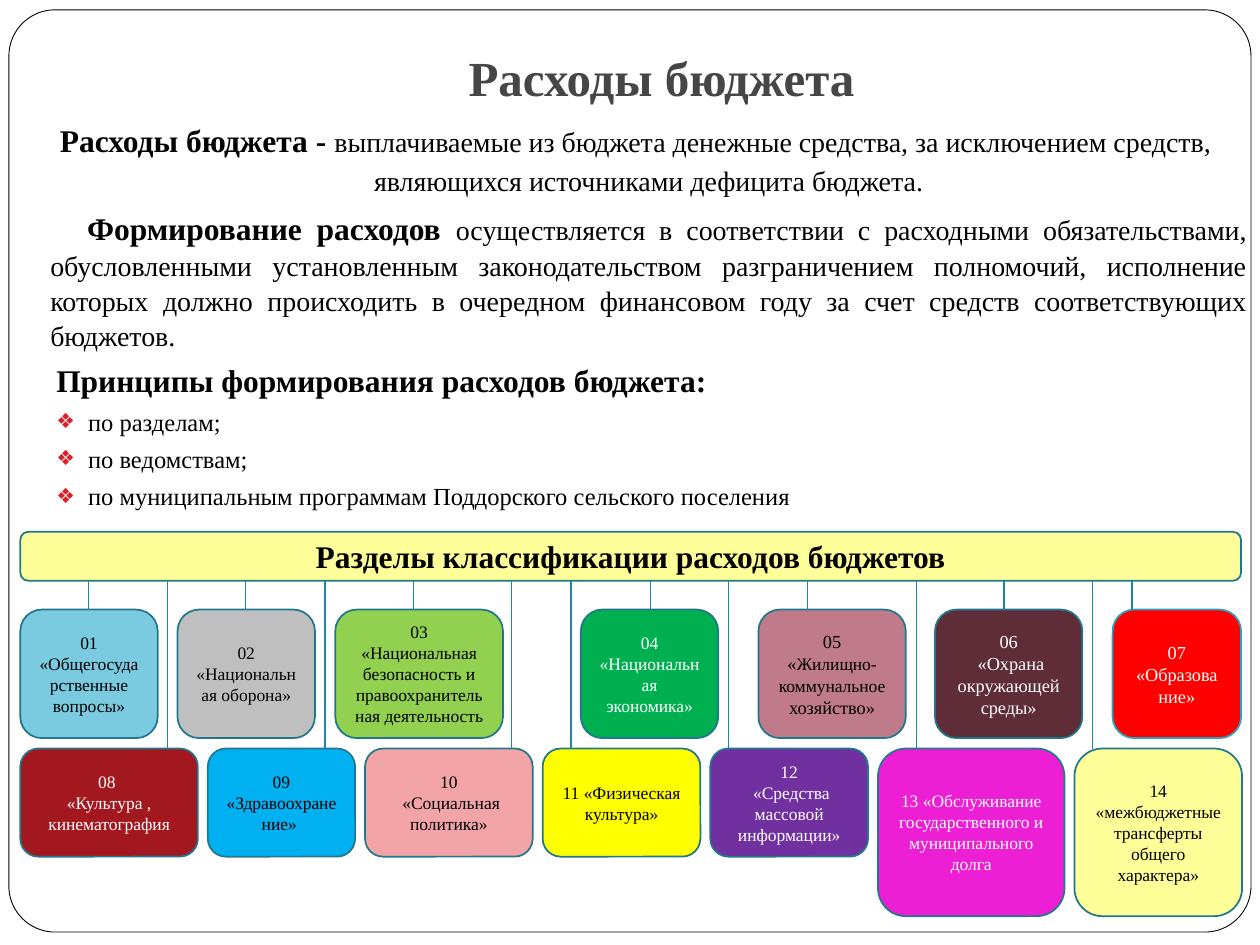
from dataclasses import dataclass
from typing import NamedTuple

from lxml.etree import SubElement
from pptx import Presentation
from pptx.dml.color import RGBColor
from pptx.enum.shapes import MSO_CONNECTOR as Connector, MSO_SHAPE as Preset
from pptx.enum.text import MSO_ANCHOR as Anchor, MSO_AUTO_SIZE as AutoSize, PP_ALIGN as Align
from pptx.oxml.ns import qn
from pptx.util import Cm, Pt

FONT = "Times New Roman"
BLACK, WHITE, YELLOW = "000000", "FFFFFF", "FFFF99"
TEAL, AQUA, DROP_COLOR, BULLET_COLOR = "21788D", "2DA2BF", "1E859F", "DA1F28"
LEFT, FULL_WIDTH, GAP = 0.41, 24.61, 0.2
BANNER_TOP, BANNER_BOTTOM = 10.72, 11.71
UPPER_TOP, UPPER_HEIGHT = 12.29, 2.59
LOWER_TOP, LOWER_HEIGHT, TALL_HEIGHT = 15.09, 2.18, 3.38


class Run(NamedTuple):
    text: str
    size: float
    bold: bool = False


@dataclass
class BodyParagraph:
    runs: list[Run]
    align: Align = Align.JUSTIFY
    margin: float = 1.52
    indent: float = -0.64
    before: float = 3.7
    bullet: bool = False


@dataclass
class Section:
    width: float
    drop: float
    fill: str
    color: str
    text: str
    left: float = LEFT
    size: float = 10
    height: float = LOWER_HEIGHT
    line: str = TEAL


BODY = [
    BodyParagraph(
        [Run(" ", 26), Run("Расходы бюджета - ", 18, True),
         Run("выплачиваемые из бюджета денежные средства, за исключением средств, "
             "являющихся источниками дефицита бюджета.", 16)],
        Align.CENTER, 0.76, -0.76, 5.8),
    BodyParagraph(
        [Run("Формирование расходов ", 18, True),
         Run("осуществляется в соответствии с расходными обязательствами, обусловленными "
             "установленным законодательством разграничением полномочий, исполнение которых "
             "должно происходить в очередном финансовом году за счет средств "
             "соответствующих бюджетов.", 16)],
        margin=0.76, indent=0.74, before=5.8),
    BodyParagraph([Run("Принципы формирования расходов бюджета:", 18, True)]),
    *(BodyParagraph([Run(text, 14)], bullet=True) for text in (
        "по разделам;",
        "по ведомствам;",
        "по муниципальным программам Поддорского сельского поселения")),
]

UPPER = [
    Section(2.77, 1.78, "7ACBE0", BLACK, "01 «Общегосударственные вопросы»"),
    Section(2.77, 4.95, "BFBFBF", BLACK, "02 «Национальная оборона»", 3.58),
    Section(3.38, 8.33, "92D050", BLACK,
            "03 «Национальная безопасность и правоохранительная деятельность", 6.76),
    Section(2.77, 13.11, "00B050", WHITE, "04 «Национальная экономика»", 11.71),
    Section(2.97, 16.28, "C07B8A", BLACK, "05 «|Жилищно-коммунальное| хозяйство»", 15.29, 10.5),
    Section(2.97, 20.24, "5E2D37", WHITE, "06\n «Охрана окружающей среды»", 18.85, 10.5),
    Section(2.59, 22.82, "FF0000", WHITE, "07 «Образование»", 22.43, 10.5, line=AQUA),
]

LOWER = [
    Section(3.58, 3.38, "A3171E", WHITE, "08 \n«Культура , кинематография"),
    Section(2.97, 6.55, "00B0F0", BLACK, "09 «Здравоохранение» "),
    Section(3.38, 10.31, "F2A4A7", BLACK, "10\n «Социальная политика»"),
    Section(3.18, 11.51, "FFFF00", BLACK, "11 «Физическая культура»"),
    Section(3.18, 14.68, "7030A0", WHITE, "12\n «Средства массовой информации»"),
    Section(3.76, 18.47, "ED1FD4", WHITE,
            "13 «Обслуживание государственного и муниципального долга", height=TALL_HEIGHT),
    Section(3.38, 22.02, YELLOW, BLACK,
            "14 «межбюджетные трансферты общего характера»", height=TALL_HEIGHT),
]


def rgb(value: str) -> RGBColor:
    """Turn a hex string into a colour."""
    return RGBColor.from_string(value)


def place(shape, left: float, top: float, width: float, height: float) -> None:
    """Move and size a shape in centimetres."""
    shape.left, shape.top, shape.width, shape.height = map(Cm, (left, top, width, height))


def style(paragraph, size: float, color: str, bold: bool = False, align: Align = Align.CENTER) -> None:
    """Set the alignment and font of a whole paragraph."""
    paragraph.alignment = align
    font = paragraph.font
    font.name, font.size, font.bold = FONT, Pt(size), bold
    font.color.rgb = rgb(color)


def add_box(slide, left: float, top: float, width: float, height: float,
            fill: str, line: str, line_width: float = 1):
    """Draw a rounded box."""
    shape = slide.shapes.add_shape(Preset.ROUNDED_RECTANGLE, *map(Cm, (left, top, width, height)))
    shape.shadow.inherit = False
    shape.fill.solid()
    shape.fill.fore_color.rgb = rgb(fill)
    shape.line.color.rgb = rgb(line)
    shape.line.width = Pt(line_width)
    return shape


def write_lines(shape, text: str, size: float, color: str, bold: bool = False) -> None:
    """Write centred lines, setting every second part between bars half a point smaller."""
    frame = shape.text_frame
    frame.vertical_anchor = Anchor.MIDDLE
    for number, line in enumerate(text.split("\n")):
        paragraph = frame.add_paragraph() if number else frame.paragraphs[0]
        style(paragraph, size, color, bold)
        for index, part in enumerate(line.split("|")):
            run = paragraph.add_run()
            run.text = part
            if index % 2:
                run.font.size = Pt(size - 0.5)


def add_drop(slide, x: float, bottom: float) -> None:
    """Draw a vertical line from the banner down to a section."""
    connector = slide.shapes.add_connector(
        Connector.STRAIGHT, Cm(x), Cm(BANNER_BOTTOM), Cm(x), Cm(bottom))
    connector.line.color.rgb = rgb(DROP_COLOR)
    connector.line.width = Pt(0.75)
    SubElement(connector.element.spPr, qn("a:effectLst"))


def add_section(slide, section: Section, left: float, top: float, height: float) -> None:
    """Draw one budget section with its line to the banner."""
    shape = add_box(slide, left, top, section.width, height, section.fill, section.line)
    write_lines(shape, section.text, section.size, section.color)
    add_drop(slide, section.drop, top)


def write_body(frame) -> None:
    """Write the definitions and the list of principles."""
    frame.auto_size = AutoSize.NONE
    for number, content in enumerate(BODY):
        paragraph = frame.add_paragraph() if number else frame.paragraphs[0]
        paragraph.line_spacing = 1.05
        paragraph.space_before = Pt(content.before)
        properties = paragraph._p.get_or_add_pPr()
        properties.set("marL", str(Cm(content.margin)))
        properties.set("indent", str(Cm(content.indent)))
        if content.bullet:
            color = SubElement(properties, qn("a:buClr"))
            SubElement(color, qn("a:srgbClr"), val=BULLET_COLOR)
            SubElement(properties, qn("a:buSzPct"), val="85000")
            SubElement(properties, qn("a:buChar"), char="❖")
        else:
            SubElement(properties, qn("a:buNone"))
        style(paragraph, content.runs[0].size, BLACK, align=content.align)
        for part in content.runs:
            run = paragraph.add_run()
            run.text = part.text
            run.font.size, run.font.bold = Pt(part.size), part.bold


def main() -> None:
    """Build the slide and save it."""
    presentation = Presentation()
    presentation.slide_width, presentation.slide_height = Cm(25.4), Cm(19.05)
    slide = presentation.slides.add_slide(presentation.slide_layouts[1])
    title, body = slide.placeholders

    frame = add_box(slide, 0.18, 0.2, 25.04, 18.59, WHITE, BLACK, 0.5)
    frame.adjustments[0] = 0.05
    title.element.addprevious(frame.element)

    place(title, 2.54, 0.76, 21.59, 1.63)
    title.text_frame.text = "Расходы бюджета"
    title.text_frame.auto_size = AutoSize.NONE
    title.text_frame.vertical_anchor = Anchor.BOTTOM
    title.text_frame.margin_bottom = Cm(0.25)
    style(title.text_frame.paragraphs[0], 28, "464646", True)

    place(body, 0, 1.98, 25.4, 17.07)
    write_body(body.text_frame)

    banner = add_box(slide, LEFT, BANNER_TOP, FULL_WIDTH, BANNER_BOTTOM - BANNER_TOP, YELLOW, TEAL)
    write_lines(banner, "Разделы классификации расходов бюджетов", 18, BLACK, True)

    for section in UPPER:
        add_section(slide, section, section.left, UPPER_TOP, UPPER_HEIGHT)
    left = LEFT
    for section in LOWER:
        add_section(slide, section, left, LOWER_TOP, section.height)
        left += section.width + GAP
    presentation.save("out.pptx")


if __name__ == "__main__":
    main()
